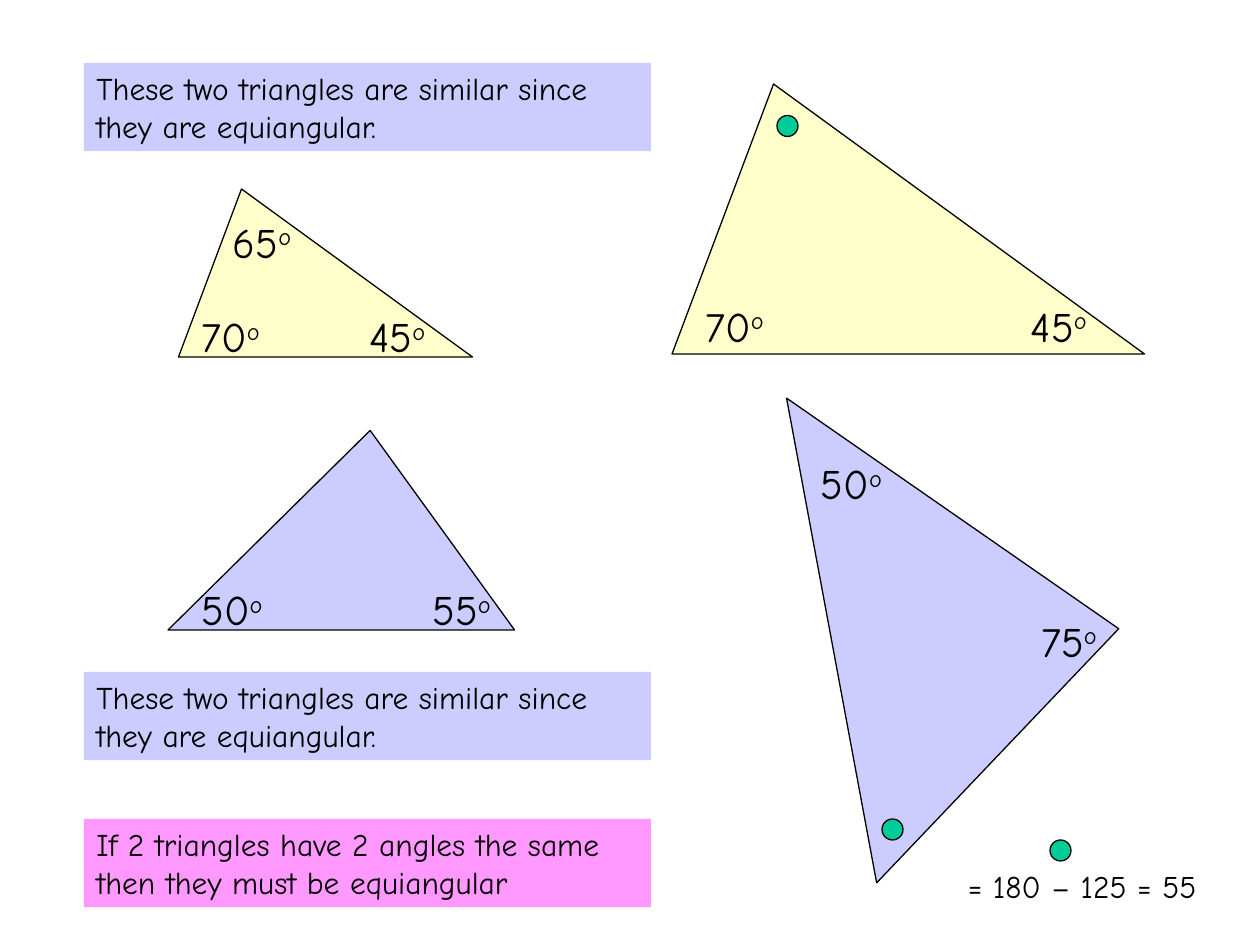
from typing import NamedTuple

from pptx import Presentation
from pptx.dml.color import RGBColor
from pptx.enum.shapes import MSO_SHAPE
from pptx.enum.text import MSO_ANCHOR, MSO_AUTO_SIZE, PP_ALIGN
from pptx.shapes.autoshape import Shape
from pptx.shapes.shapetree import GroupShapes
from pptx.text.text import TextFrame, _Paragraph
from pptx.util import Pt

BLACK = RGBColor(0x00, 0x00, 0x00)
YELLOW = RGBColor(0xFF, 0xFF, 0xCC)
LILAC = RGBColor(0xCC, 0xCC, 0xFF)
PINK = RGBColor(0xFF, 0x99, 0xFF)
GREEN = RGBColor(0x00, 0xCC, 0x99)

OVAL = MSO_SHAPE.OVAL
RECTANGLE = MSO_SHAPE.RECTANGLE
TOP = MSO_ANCHOR.TOP
LEFT = PP_ALIGN.LEFT
GROW = MSO_AUTO_SIZE.SHAPE_TO_FIT_TEXT

FONT = "Comic Neue"
BODY_SIZE = 18
ANGLE_SIZE = 24
DOT_SIZE = 12
SIMILAR = "These two triangles are similar since they are equiangular."


class Triangle(NamedTuple):
    corners: tuple[tuple[float, float], ...]
    color: RGBColor


class Angle(NamedTuple):
    degrees: int
    left: float
    top: float


class Dot(NamedTuple):
    left: float
    top: float


class Note(NamedTuple):
    text: str
    top: float
    color: RGBColor


class Example(NamedTuple):
    triangles: list[Triangle]
    angles: list[Angle]
    dots: list[Dot]
    notes: list[Note]


EXAMPLES = [
    Example(
        triangles=[
            Triangle(((102, 204), (270, 204), (138, 108)), YELLOW),
            Triangle(((384, 202.3), (654, 202.3), (442, 48)), YELLOW),
        ],
        angles=[
            Angle(70, 108, 174),
            Angle(70, 396, 168),
            Angle(45, 204, 174),
            Angle(65, 126, 120),
            Angle(45, 582, 168),
        ],
        dots=[Dot(444, 66)],
        notes=[Note(SIMILAR, 36, LILAC)],
    ),
    Example(
        triangles=[
            Triangle(((96, 360), (294, 360), (211.5, 246)), LILAC),
            Triangle(((449.5, 227.5), (501, 504.5), (639.3, 359.3)), LILAC),
        ],
        angles=[
            Angle(50, 108, 330),
            Angle(55, 240, 330),
            Angle(75, 588, 348),
            Angle(50, 462, 258),
        ],
        dots=[Dot(504, 468), Dot(600, 480)],
        notes=[
            Note(SIMILAR, 384, LILAC),
            Note("If 2 triangles have 2 angles the same then they must be equiangular", 468, PINK),
        ],
    ),
]


def outline(shape: Shape, color: RGBColor) -> None:
    """Fill a shape and give it the thin black outline."""
    shape.shadow.inherit = False
    shape.fill.solid()
    shape.fill.fore_color.rgb = color
    shape.line.color.rgb = BLACK
    shape.line.width = Pt(0.75)


def prepare_text(frame: TextFrame, size: float) -> _Paragraph:
    """Set up a wrapping frame and return its first paragraph."""
    frame.word_wrap = True
    frame.auto_size = GROW
    frame.vertical_anchor = TOP
    para = frame.paragraphs[0]
    para.alignment = LEFT
    para.font.name = FONT
    para.font.size = Pt(size)
    para.font.color.rgb = BLACK
    return para


def draw_triangle(shapes: GroupShapes, triangle: Triangle) -> None:
    first, *others = [(Pt(x), Pt(y)) for x, y in triangle.corners]
    builder = shapes.build_freeform(*first)
    builder.add_line_segments(others, close=True)
    outline(builder.convert_to_shape(), triangle.color)


def draw_angle(shapes: GroupShapes, angle: Angle) -> None:
    box = shapes.add_textbox(Pt(angle.left), Pt(angle.top), Pt(66), Pt(36))
    para = prepare_text(box.text_frame, ANGLE_SIZE)
    para.add_run().text = str(angle.degrees)
    degree = para.add_run()
    degree.text = "o"
    degree.font._element.set("baseline", "30000")


def draw_dot(shapes: GroupShapes, dot: Dot) -> None:
    oval = shapes.add_shape(OVAL, Pt(dot.left), Pt(dot.top), Pt(DOT_SIZE), Pt(DOT_SIZE))
    outline(oval, GREEN)


def draw_note(shapes: GroupShapes, note: Note) -> None:
    box = shapes.add_shape(RECTANGLE, Pt(48), Pt(note.top), Pt(324), Pt(50.4))
    box.shadow.inherit = False
    box.fill.solid()
    box.fill.fore_color.rgb = note.color
    box.line.fill.background()
    prepare_text(box.text_frame, BODY_SIZE).add_run().text = note.text


def draw_example(shapes: GroupShapes, example: Example) -> None:
    for triangle in example.triangles:
        draw_triangle(shapes, triangle)
    for angle in example.angles:
        draw_angle(shapes, angle)
    for dot in example.dots:
        draw_dot(shapes, dot)
    for note in example.notes:
        draw_note(shapes, note)


def draw_calculation(shapes: GroupShapes) -> None:
    box = shapes.add_textbox(Pt(546), Pt(492), Pt(174), Pt(28.8))
    prepare_text(box.text_frame, BODY_SIZE).add_run().text = "= 180 – 125 = 55"


def main() -> None:
    deck = Presentation()
    deck.slide_width, deck.slide_height = Pt(720), Pt(540)
    page = deck.slides.add_slide(deck.slide_layouts[6])
    for example in EXAMPLES:
        group = page.shapes.add_group_shape()
        draw_example(group.shapes, example)
    draw_calculation(group.shapes)
    deck.save("out.pptx")


if __name__ == "__main__":
    main()
